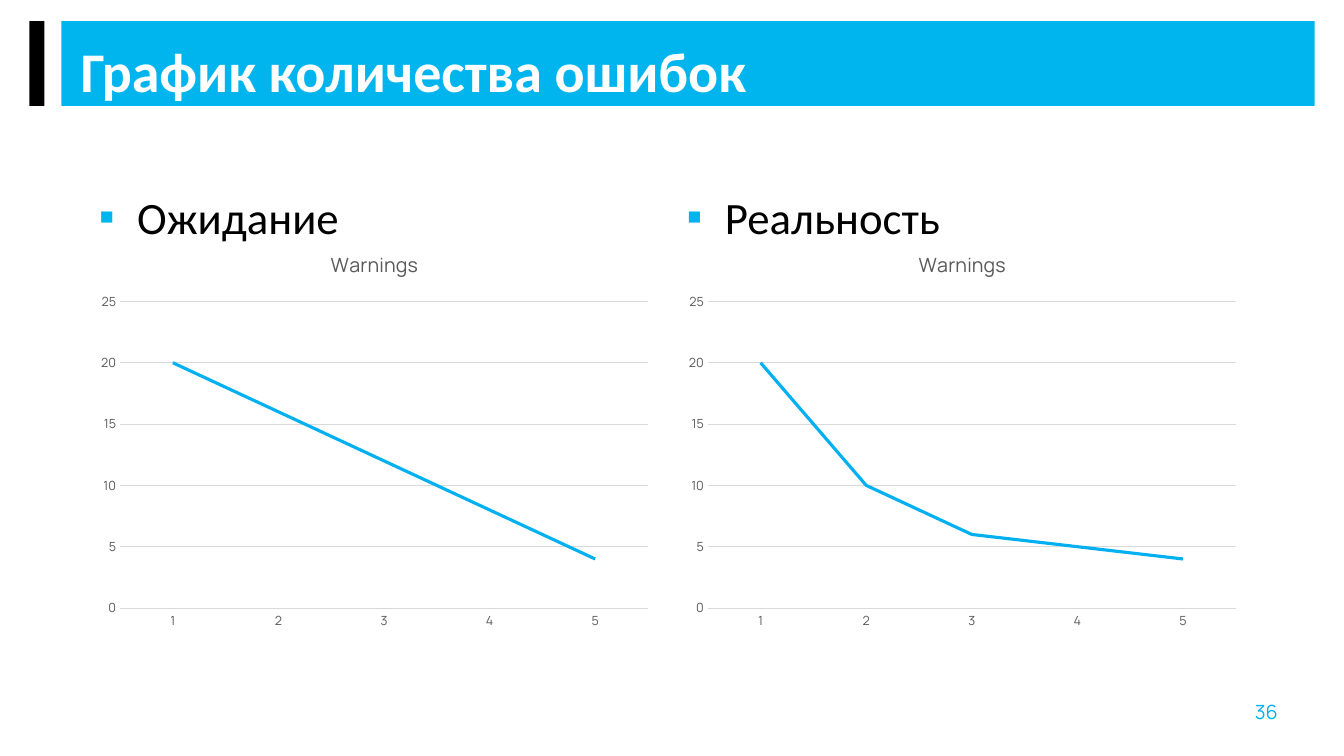
from lxml import etree
from pptx import Presentation
from pptx.chart.data import CategoryChartData
from pptx.dml.color import RGBColor
from pptx.enum import chart as ch, shapes, text
from pptx.oxml.ns import qn
from pptx.util import Inches, Pt

CYAN = RGBColor(0x00, 0xB4, 0xED)
BLUE = RGBColor(0x00, 0xB0, 0xF0)
BLACK = RGBColor(0x00, 0x00, 0x00)
WHITE = RGBColor(0xFF, 0xFF, 0xFF)
GRAY = RGBColor(0x59, 0x59, 0x59)
GRID = RGBColor(0xD9, 0xD9, 0xD9)


def style_font(font, size, color, name="Manrope", bold=False):
    font.name, font.size, font.bold = name, Pt(size), bold
    font.color.rgb = color


def place(sp, x, y, w, h):
    sp.left, sp.top, sp.width, sp.height = (Inches(v) for v in (x, y, w, h))


def write(sp, words, size, color, name="Manrope", bold=False):
    """Put one left-aligned, top-anchored run into a shape."""
    tf = sp.text_frame
    tf.word_wrap = True
    tf.auto_size = text.MSO_AUTO_SIZE.NONE
    tf.vertical_anchor = text.MSO_ANCHOR.TOP
    p = tf.paragraphs[0]
    p.alignment = text.PP_ALIGN.LEFT
    p.line_spacing = 1.0
    p.space_before = Pt(0)
    r = p.add_run()
    r.text = words
    style_font(r.font, size, color, name, bold)
    return p


def add_block(s, x, y, w, h, color):
    sp = s.shapes.add_shape(shapes.MSO_SHAPE.RECTANGLE, *(Inches(v) for v in (x, y, w, h)))
    sp.shadow.inherit = False
    sp.fill.solid()
    sp.fill.fore_color.rgb = color
    sp.line.fill.background()
    s.shapes._spTree.remove(sp._element)
    s.shapes._spTree.insert(2, sp._element)  # behind the placeholders


def add_header(s, x, y, w, h, title):
    add_block(s, x, y, 0.15, h, BLACK)
    add_block(s, x + 0.32, y, w - 0.32, h, CYAN)
    sp = s.shapes.title
    place(sp, x + 0.41, y + 0.07, w - 0.73, h - 0.14)
    sp.text_frame.margin_top = Inches(0.08)
    write(sp, title, 40, WHITE, "Calibri", True)


def add_bullet(p):
    pPr = p._p.get_or_add_pPr()
    pPr.set("marL", str(Inches(0.38)))
    pPr.set("indent", str(-Inches(0.38)))
    color = etree.SubElement(pPr, qn("a:buClr"))
    etree.SubElement(color, qn("a:srgbClr")).set("val", str(CYAN))
    etree.SubElement(pPr, qn("a:buFont")).set("typeface", "Arial")
    etree.SubElement(pPr, qn("a:buChar")).set("char", "▪")


def add_warnings_chart(s, x, y, w, h, values):
    data = CategoryChartData()
    data.categories = ["1", "2", "3", "4", "5"]
    data.add_series("Warnings", values)
    chart = s.shapes.add_chart(
        ch.XL_CHART_TYPE.LINE, *(Inches(v) for v in (x, y, w, h)), data).chart
    style_font(chart.font, 10, BLACK)
    chart.has_legend = False
    chart.has_title = True
    r = chart.chart_title.text_frame.paragraphs[0].add_run()
    r.text = "Warnings"
    style_font(r.font, 14, GRAY)

    for axis in (chart.category_axis, chart.value_axis):
        axis.major_tick_mark = axis.minor_tick_mark = ch.XL_TICK_MARK.NONE
        style_font(axis.tick_labels.font, 9, GRAY)
    val_axis = chart.value_axis
    val_axis.minimum_scale, val_axis.maximum_scale, val_axis.major_unit = 0, 25, 5
    val_axis.format.line.fill.background()
    for line in (chart.category_axis.format.line, val_axis.major_gridlines.format.line):
        line.color.rgb = GRID
        line.width = Pt(0.75)

    chart.plots[0].vary_by_categories = False
    series = chart.plots[0].series[0]
    series.smooth = False
    series.marker.style = ch.XL_MARKER_STYLE.NONE
    series.format.line.color.rgb = BLUE
    series.format.line.width = Pt(2.25)


def add_column(s, body, x, y, w, h, heading, values):
    """Bulleted heading with a line chart below it."""
    place(body, x, y, w, 0.58)
    body.text_frame.margin_top = Inches(0.08)
    add_bullet(write(body, heading, 32, BLACK, "Calibri"))
    add_warnings_chart(s, x + 0.01, y + 0.5, w, h - 0.5, values)


def add_page_number(s, x, y, w, h, number):
    sp = s.shapes.add_shape(shapes.MSO_SHAPE.OVAL, *(Inches(v) for v in (x, y, w, h)))
    sp.shadow.inherit = False
    sp.fill.background()
    sp.line.fill.background()
    write(sp, number, 14, BLUE)


def main():
    prs = Presentation()
    prs.slide_width, prs.slide_height = Inches(13.33), Inches(7.5)
    s = prs.slides.add_slide(prs.slide_layouts[3])
    add_header(s, 0.29, 0.21, 12.75, 0.84, "График количества ошибок")
    columns = [("Ожидание", (20, 16, 12, 8, 4)), ("Реальность", (20, 10, 6, 5, 4))]
    for i, (heading, values) in enumerate(columns):
        add_column(s, s.placeholders[i + 1], 0.88 + 5.83 * i, 1.8, 5.65, 4.53,
                   heading, values)
    add_page_number(s, 12.21, 6.78, 0.94, 0.77, "36")
    prs.save("out.pptx")


if __name__ == "__main__":
    main()
